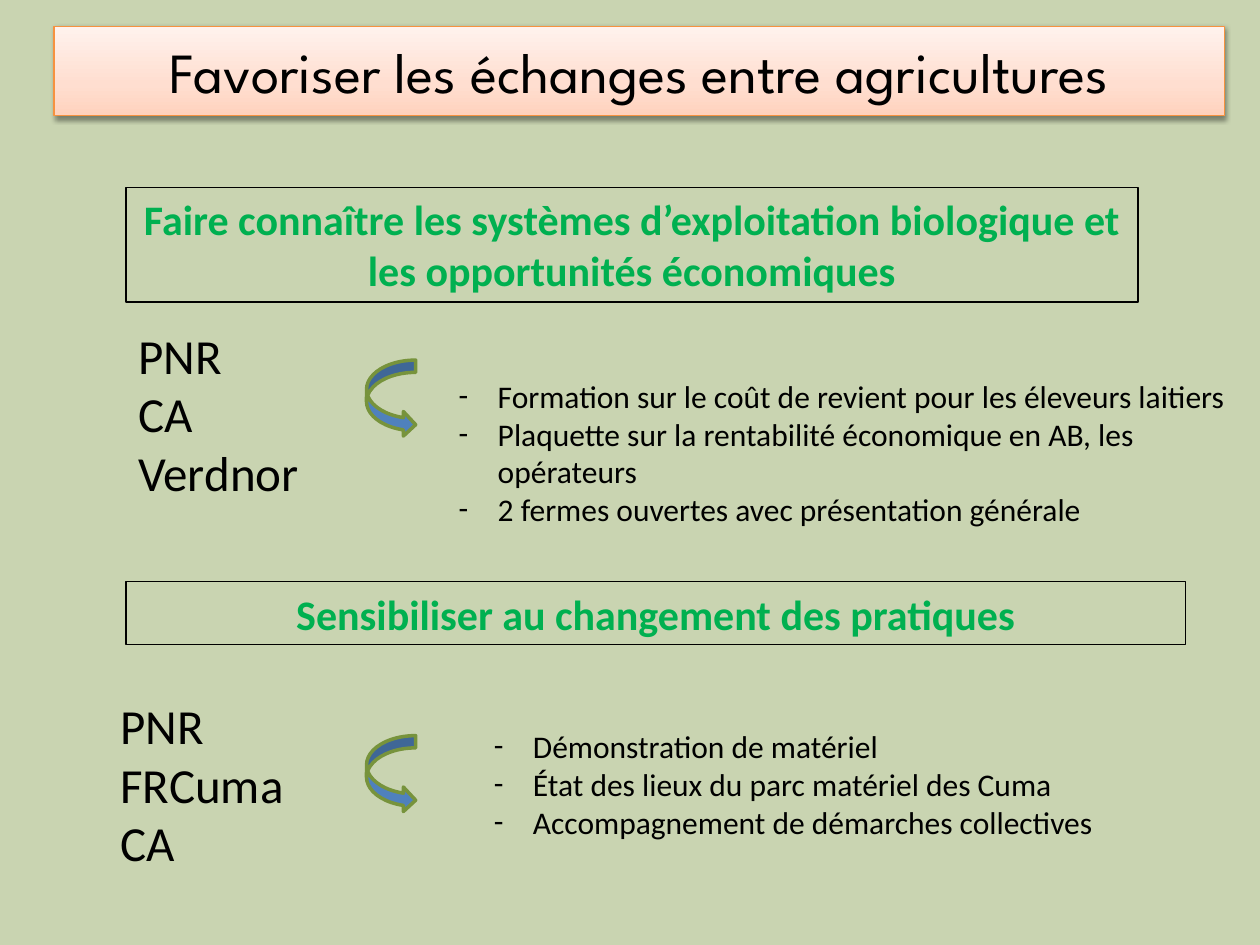
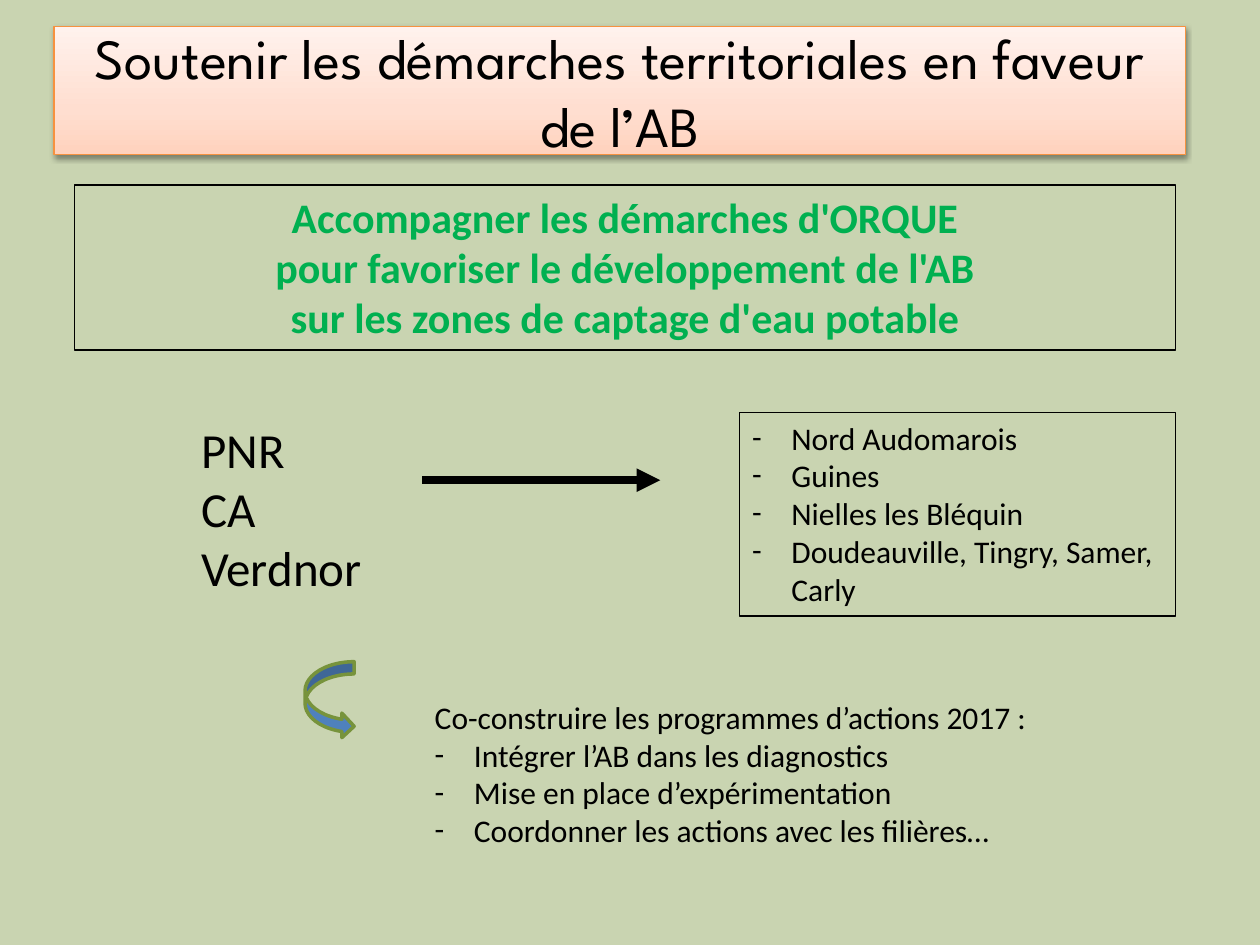
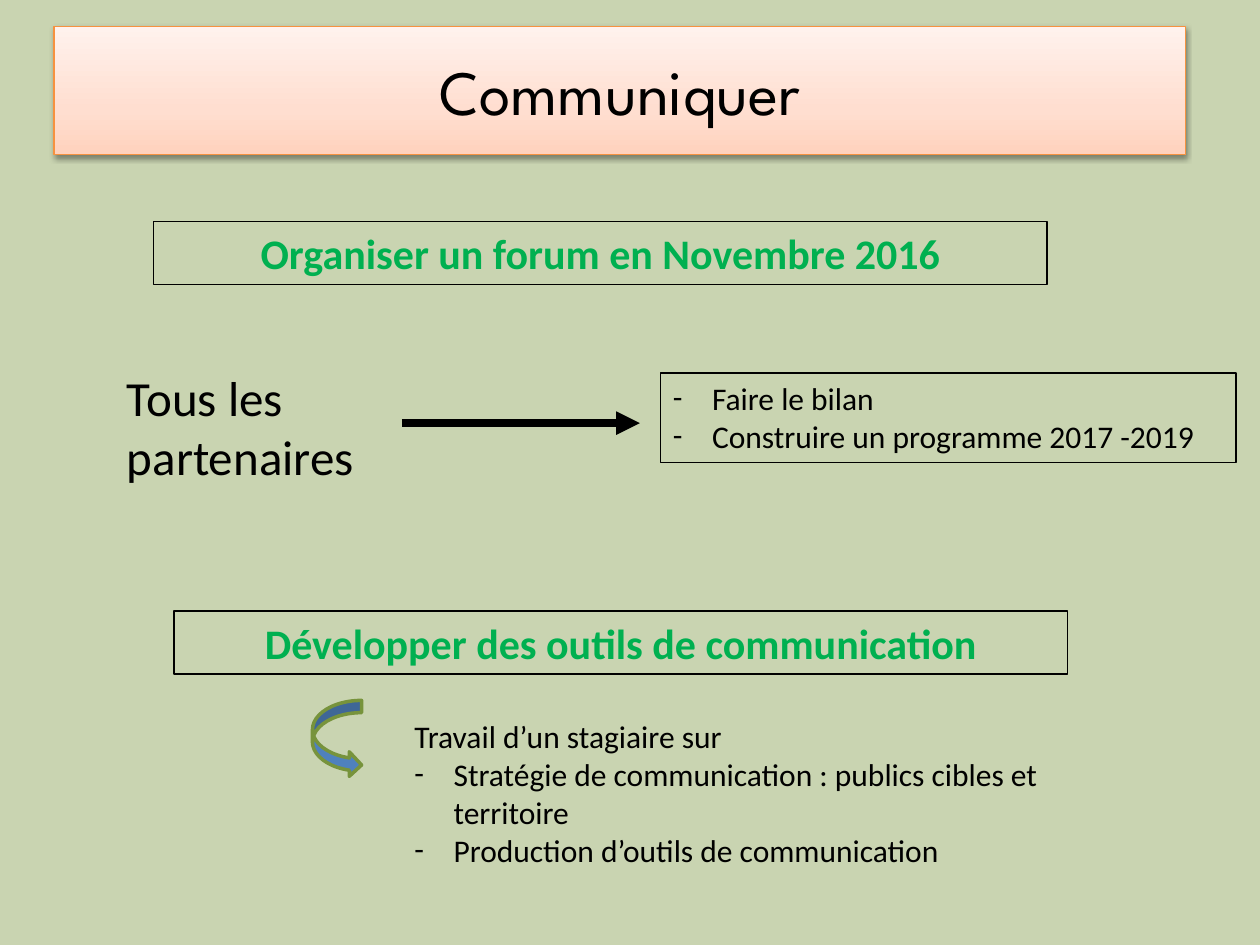
"""Build three slides on the actions that support organic farming."""
from copy import deepcopy
from dataclasses import dataclass

from lxml import etree
from pptx import Presentation
from pptx import util as u
from pptx.dml.color import RGBColor
from pptx.enum import shapes, text
from pptx.oxml import parse_xml
from pptx.oxml.ns import nsdecls, qn


@dataclass(frozen=True)
class Theme:
    back: str = "C9D4B1"
    ink: str = "000000"
    green: str = "00B050"
    olive: str = "77933C"
    blue: str = "4F81BD"
    edge: str = "F69240"
    blend: tuple = ((0, "FFD2BD"), (0.35, "FFDED0"), (1, "FFF2ED"))
    head: str = "League Spartan"
    body: str = "Calibri"
    band: int = 24
    team: int = 28
    item: int = 18


T = Theme()
rgb = RGBColor.from_string


def place(shape, box):
    shape.left, shape.top, shape.width, shape.height = map(u.Cm, box)


def write(shape, lines, size, font=T.body, color=T.ink, bold=False,
          align=text.PP_ALIGN.LEFT, dash=None, frame=False):
    """Fill a shape with lines; those from index dash on get a dash bullet."""
    body = shape.text_frame
    body.word_wrap = True
    body.auto_size = text.MSO_AUTO_SIZE.NONE
    if frame:
        shape.line.color.rgb = rgb(T.ink)
        shape.line.width = u.Pt(0.75)
    for i, line in enumerate(lines):
        par = body.paragraphs[0] if i == 0 else body.add_paragraph()
        par.alignment = align
        par.space_before = u.Pt(0)
        run = par.add_run()
        run.text = line
        run.font.size = u.Pt(size)
        run.font.name = font
        run.font.bold = bold
        run.font.color.rgb = rgb(color)
        if dash is not None:
            mark = i >= dash
            step = u.Cm(0.79) if mark else 0
            prop = par._p.get_or_add_pPr()
            prop.set("marL", str(step))
            prop.set("indent", str(-step))
            if mark:
                etree.SubElement(prop, qn("a:buFont"), typeface=T.body)
                etree.SubElement(prop, qn("a:buChar"), char="-")
            else:
                etree.SubElement(prop, qn("a:buNone"))


PAGES = [
    dict(
        title="Favoriser les échanges entre agricultures", size=32.4, span=(23.6, 1.8),
        bands=[
            ((2.54, 3.78, 20.4, 2.31),
             ["Faire connaître les systèmes d’exploitation biologique et les opportunités économiques"]),
            ((2.54, 11.73, 21.36, 1.27), ["Sensibiliser au changement des pratiques"]),
        ],
        teams=[
            ((2.54, 6.43, 5.69, 3.84), ["PNR", "CA", "Verdnor"]),
            ((2.18, 13.89, 5.69, 3.84), ["PNR", "FRCuma", "CA"]),
        ],
        lists=[
            ((8.99, 7.47, 16.41, 3.35), 0, False,
             ["Formation sur le coût de revient pour les éleveurs laitiers",
              "Plaquette sur la rentabilité économique en AB, les opérateurs",
              "2 fermes ouvertes avec présentation générale"]),
            ((9.7, 14.53, 13.79, 2.57), 0, False,
             ["Démonstration de matériel",
              "État des lieux du parc matériel des Cuma",
              "Accompagnement de démarches collectives"]),
        ],
        hooks=[(7.39, 7.26), (7.39, 14.83)], rays=[],
    ),
    dict(
        title="Soutenir les démarches territoriales en faveur de l’AB", size=32.4, span=(22.81, 2.59),
        bands=[
            ((1.5, 3.73, 22.2, 3.33),
             ["Accompagner les démarches d'ORQUE",
              "pour favoriser le développement de l'AB",
              "sur les zones de captage d'eau potable"]),
        ],
        teams=[((3.81, 8.33, 5.69, 3.84), ["PNR", "CA", "Verdnor"])],
        lists=[
            ((14.91, 8.31, 8.79, 4.11), 0, True,
             ["Nord Audomarois", "Guines", "Nielles les Bléquin",
              "Doudeauville, Tingry, Samer, Carly"]),
            ((8.51, 13.94, 14.2, 3.33), 1, False,
             ["Co-construire les programmes d’actions 2017 :",
              "Intégrer l’AB dans les diagnostics",
              "Mise en place d’expérimentation",
              "Coordonner les actions avec les filières…"]),
        ],
        hooks=[(6.15, 13.34)], rays=[(8.51, 9.68)],
    ),
    dict(
        title="Communiquer", size=36, span=(22.81, 2.59),
        bands=[
            ((3.1, 4.47, 18.01, 1.27), ["Organiser un forum en Novembre 2016"]),
            ((3.51, 12.32, 18.01, 1.27), ["Développer des outils de communication"]),
        ],
        teams=[((2.31, 7.29, 6.91, 2.64), ["Tous les partenaires"])],
        lists=[
            ((13.31, 7.52, 11.61, 1.8), 0, True,
             ["Faire le bilan", "Construire un programme 2017 -2019"]),
            ((8.1, 14.33, 14.2, 4.11), 1, False,
             ["Travail d’un stagiaire sur",
              "Stratégie de communication : publics cibles et territoire",
              "Production d’outils de communication"]),
        ],
        hooks=[(6.3, 14.12)], rays=[(8.1, 8.53)],
    ),
]

deck = Presentation()
deck.slide_width, deck.slide_height = u.Cm(25.4), u.Cm(19.05)

for page in PAGES:
    slide = deck.slides.add_slide(deck.slide_layouts[3])
    slide.background.fill.solid()
    slide.background.fill.fore_color.rgb = rgb(T.back)

    title = slide.shapes.title
    place(title, (1.09, 0.53, *page["span"]))
    title.fill.gradient()
    title.fill.gradient_angle = 90
    stops = title._element.spPr.find(".//" + qn("a:gsLst"))
    stops.append(deepcopy(stops[0]))
    for stop, (spot, tone) in zip(title.fill.gradient_stops, T.blend):
        stop.position = spot
        stop.color.rgb = rgb(tone)
    title.line.color.rgb = rgb(T.edge)
    title.line.width = u.Pt(0.75)
    title._element.spPr.append(parse_xml(
        f'<a:effectLst {nsdecls("a")}><a:outerShdw blurRad="{u.Pt(3.1)}" '
        f'dist="{u.Pt(1.6)}" dir="5400000" rotWithShape="0"><a:srgbClr val="{T.ink}">'
        '<a:alpha val="38000"/></a:srgbClr></a:outerShdw></a:effectLst>'))
    title.text_frame.vertical_anchor = text.MSO_ANCHOR.MIDDLE
    write(title, [page["title"]], page["size"], font=T.head,
          align=text.PP_ALIGN.CENTER)

    for box, lines in page["bands"]:
        band = slide.shapes.add_textbox(*map(u.Cm, box))
        write(band, lines, T.band, color=T.green, bold=True,
              align=text.PP_ALIGN.CENTER, frame=True)

    for box, lines in page["teams"]:
        write(slide.shapes.add_textbox(*map(u.Cm, box)), lines, T.team)

    for slot, (box, dash, frame, lines) in enumerate(page["lists"], 1):
        block = slide.placeholders[slot]
        place(block, box)
        write(block, lines, T.item, dash=dash, frame=frame)

    for x, y in page["hooks"]:
        hook = slide.shapes.add_shape(shapes.MSO_SHAPE.CURVED_RIGHT_ARROW,
                                      *map(u.Cm, (x, y, 0.99, 1.55)))
        hook.shadow.inherit = False
        hook.fill.solid()
        hook.fill.fore_color.rgb = rgb(T.blue)
        hook.line.color.rgb = rgb(T.olive)
        hook.line.width = u.Pt(2)

    for x, y in page["rays"]:
        ray = slide.shapes.add_connector(shapes.MSO_CONNECTOR.STRAIGHT,
                                         *map(u.Cm, (x, y, x + 4.8, y)))
        ray.line.color.rgb = rgb(T.ink)
        ray.line.width = u.Pt(4.5)
        etree.SubElement(ray.line._get_or_add_ln(), qn("a:tailEnd"), type="triangle")
        etree.SubElement(ray._element.spPr, qn("a:effectLst"))

deck.save("out.pptx")
